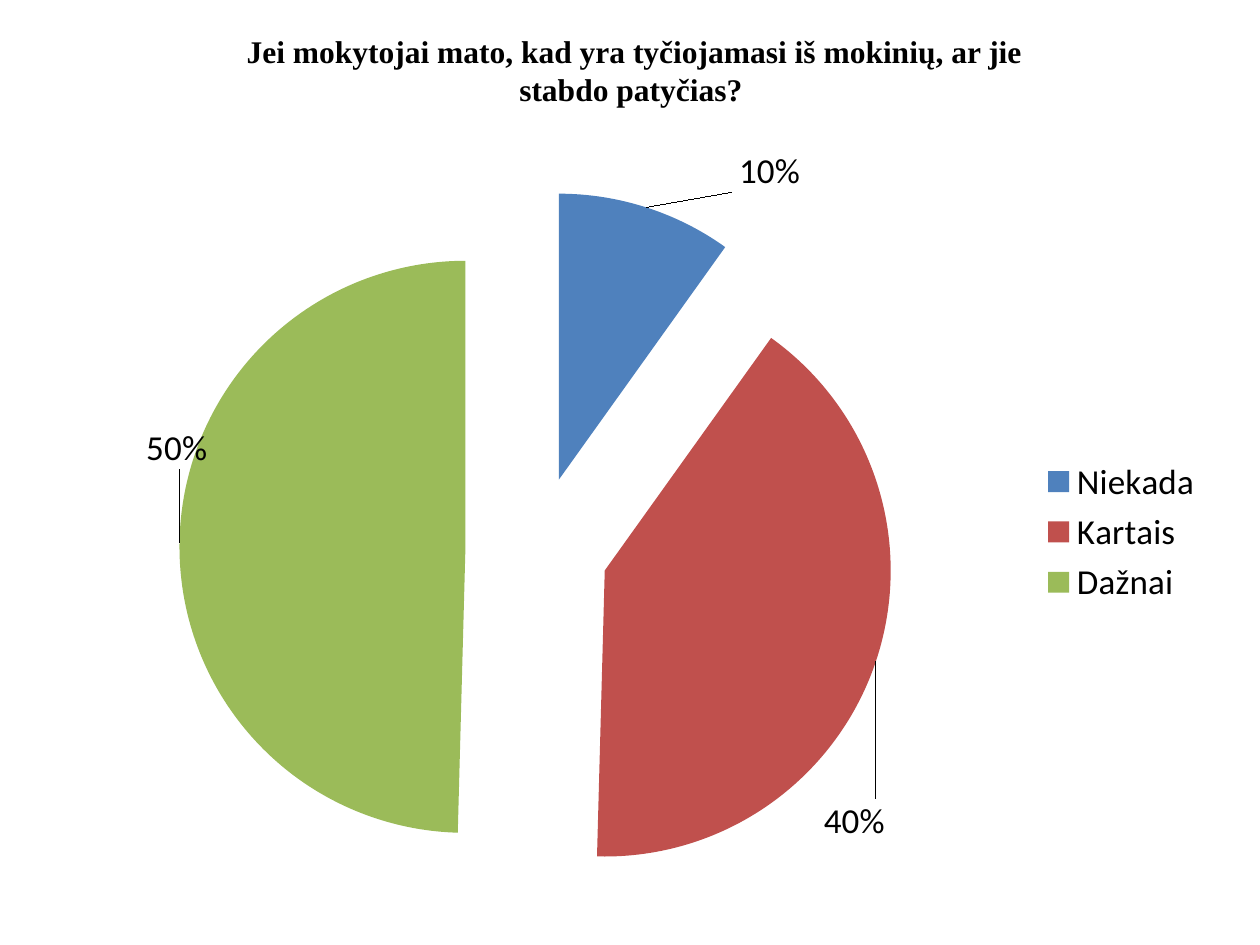
from lxml import etree
from pptx import Presentation
from pptx.chart.data import CategoryChartData
from pptx.dml.color import RGBColor
from pptx.enum.chart import XL_CHART_TYPE, XL_LABEL_POSITION, XL_LEGEND_POSITION
from pptx.enum.text import MSO_AUTO_SIZE, PP_ALIGN
from pptx.oxml.ns import qn
from pptx.util import Pt

PIE = XL_CHART_TYPE.PIE
OUTSIDE = XL_LABEL_POSITION.OUTSIDE_END
RIGHT = XL_LEGEND_POSITION.RIGHT
CENTER = PP_ALIGN.CENTER
FIT_SHAPE = MSO_AUTO_SIZE.SHAPE_TO_FIT_TEXT

BLACK = RGBColor(0x00, 0x00, 0x00)
BLUE = RGBColor(0x4F, 0x81, 0xBD)
RED = RGBColor(0xC0, 0x50, 0x4D)
GREEN = RGBColor(0x9B, 0xBB, 0x59)

QUESTION = "Jei mokytojai mato, kad yra tyčiojamasi iš mokinių, ar jie stabdo patyčias?"
ANSWERS = [
    ("Niekada", 69, BLUE, " 10%", (0.07, -0.01)),
    ("Kartais", 283, RED, "40%", (-0.05, 0.17)),
    ("Dažnai", 346, GREEN, "50%", (0.03, -0.12)),
]


def set_font(font, size, name="Calibri"):
    """Apply size, typeface and black colour to a font."""
    font.size = Pt(size)
    font.name = name
    font.color.rgb = BLACK


def make_layout(**settings):
    """Return a manual chart layout with the given settings in order."""
    layout = etree.Element(qn("c:layout"))
    manual = etree.SubElement(layout, qn("c:manualLayout"))
    for tag, value in settings.items():
        etree.SubElement(manual, qn(f"c:{tag}")).set("val", str(value))
    return layout


def add_question(slide):
    """Add the centred survey question."""
    box = slide.shapes.add_textbox(Pt(111), Pt(15), Pt(499), Pt(51))
    frame = box.text_frame
    frame.word_wrap = True
    frame.auto_size = FIT_SHAPE
    paragraph = frame.paragraphs[0]
    paragraph.alignment = CENTER
    for text, typeface, bold in ((" ", "Calibri", False), (QUESTION, "Times New Roman", True)):
        run = paragraph.add_run()
        run.text = text
        set_font(run.font, 18, typeface)
        run.font.bold = bold


def style_slice(point, color, share, offset):
    """Colour one slice and place its percentage label."""
    point.format.fill.solid()
    point.format.fill.fore_color.rgb = color
    label = point.data_label
    run = label.text_frame.paragraphs[0].add_run()
    run.text = share
    set_font(run.font, 20)
    label.position = OUTSIDE
    x, y = offset
    index = label.text_frame._txBody.getparent().getparent().getparent().find(
        f".//{qn('c:dLbl')}[last()]/{qn('c:idx')}"
    )
    index.addnext(make_layout(x=x, y=y))


def add_answer_pie(slide):
    """Add the exploded pie of answers with its legend."""
    names, counts, colors, shares, offsets = zip(*ANSWERS)
    data = CategoryChartData()
    data.categories = names
    data.add_series("Series 1", counts)
    chart = slide.shapes.add_chart(PIE, Pt(20), Pt(77), Pt(675), Pt(454), data).chart
    set_font(chart.font, 10)
    chart.has_title = False
    chart.has_legend = True
    chart.legend.position = RIGHT
    chart.legend.include_in_layout = False
    set_font(chart.legend.font, 20)

    plot = chart.plots[0]
    plot.vary_by_categories = True
    series = plot.series[0]
    labels = series.data_labels
    labels.show_value = True
    labels.show_percentage = True
    labels.position = OUTSIDE
    set_font(labels.font, 20)
    for i, (color, share, offset) in enumerate(zip(colors, shares, offsets)):
        style_slice(series.points[i], color, share, offset)

    explosion = etree.Element(qn("c:explosion"))
    explosion.set("val", "25")
    series._element.find(qn("c:dPt")).addprevious(explosion)

    plot_area = chart._chartSpace.chart.plotArea
    for old_layout in plot_area.findall(qn("c:layout")):
        plot_area.remove(old_layout)
    plot_area.insert(0, make_layout(
        layoutTarget="inner", xMode="edge", yMode="edge", x=0.12, y=0.07, w=0.61, h=0.9
    ))


def main():
    """Build and save the survey slide."""
    deck = Presentation()
    deck.slide_width, deck.slide_height = Pt(720), Pt(540)
    slide = deck.slides.add_slide(deck.slide_layouts[6])
    add_question(slide)
    add_answer_pie(slide)
    deck.save("out.pptx")


if __name__ == "__main__":
    main()
